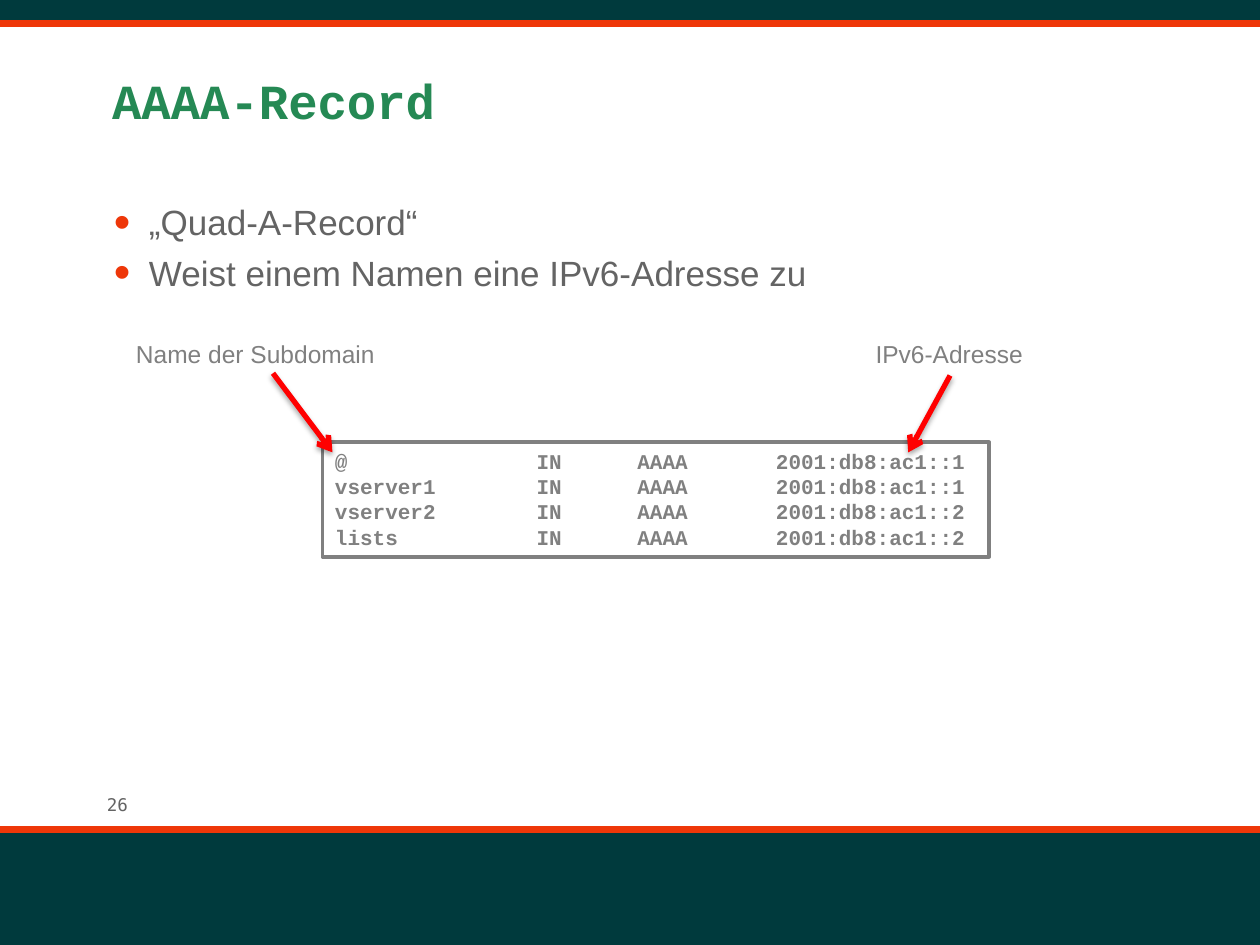
from dataclasses import dataclass

import pptx
import pptx.dml.color
import pptx.enum.shapes
import pptx.enum.text
import pptx.oxml
import pptx.oxml.ns
import pptx.util

Pt = pptx.util.Pt
NS = pptx.oxml.ns.nsdecls("a")


@dataclass(frozen=True)
class Theme:
    band: str = "003A3D"
    accent: str = "EE3709"
    title: str = "258954"
    body: str = "646464"
    muted: str = "808080"
    arrow: str = "FF0000"
    paper: str = "FFFFFF"
    sans: str = "Arial"
    mono: str = "Courier New"
    number_font: str = "DejaVu Sans Mono"
    title_size: float = 28
    body_size: float = 20
    label_size: float = 14
    code_size: float = 12
    number_size: float = 10


def rgb(value):
    return pptx.dml.color.RGBColor.from_string(value)


def xml(text):
    return pptx.oxml.parse_xml(text)


class SlideBuilder:
    def __init__(self, slide, theme):
        self.slide = slide
        self.theme = theme

    def fill_text(self, frame, lines, font, size, color, bold=False):
        frame.text = "\n".join(lines)
        for paragraph in frame.paragraphs:
            paragraph.alignment = pptx.enum.text.PP_ALIGN.LEFT
            for run in paragraph.runs:
                run.font.name = font
                run.font.size = Pt(size)
                run.font.bold = bold
                run.font.color.rgb = rgb(color)

    def place(self, placeholder, left, top, width, height, margin_top):
        placeholder.left, placeholder.top = Pt(left), Pt(top)
        placeholder.width, placeholder.height = Pt(width), Pt(height)
        frame = placeholder.text_frame
        frame.auto_size = pptx.enum.text.MSO_AUTO_SIZE.NONE
        frame.vertical_anchor = pptx.enum.text.MSO_ANCHOR.TOP
        frame.margin_top = Pt(margin_top)
        return frame

    def title(self, text, *box):
        frame = self.place(self.slide.shapes.title, *box, margin_top=9)
        t = self.theme
        self.fill_text(frame, [text], t.mono, t.title_size, t.title, bold=True)

    def bullets(self, items, *box):
        frame = self.place(self.slide.placeholders[1], *box, margin_top=6)
        t = self.theme
        self.fill_text(frame, items, t.sans, t.body_size, t.body)
        for index, paragraph in enumerate(frame.paragraphs):
            properties = paragraph._p.get_or_add_pPr()
            properties.set("marL", str(Pt(21)))
            properties.set("indent", str(-Pt(20)))
            for element in (
                f'<a:buClr {NS}><a:srgbClr val="{t.accent}"/></a:buClr>',
                f'<a:buSzPct {NS} val="135000"/>',
                f'<a:buFont {NS} typeface="{t.sans}"/>',
                f'<a:buChar {NS} char="•"/>',
            ):
                properties.append(xml(element))
            paragraph.space_before = Pt(5 if index else 0)

    def rectangle(self, left, top, width, height, fill, line, weight):
        shape = self.slide.shapes.add_shape(
            pptx.enum.shapes.MSO_SHAPE.RECTANGLE,
            Pt(left), Pt(top), Pt(width), Pt(height))
        shape.shadow.inherit = False
        shape.fill.solid()
        shape.fill.fore_color.rgb = rgb(fill)
        shape.line.color.rgb = rgb(line)
        shape.line.width = Pt(weight)
        return shape

    def band(self, top, height):
        self.rectangle(0, top, 720, height, self.theme.band, self.theme.band, 0.75)

    def text(self, text, left, top, width, height, font, size, color):
        label = self.slide.shapes.add_textbox(Pt(left), Pt(top), Pt(width), Pt(height))
        label.text_frame.word_wrap = False
        self.fill_text(label.text_frame, [text], font, size, color)

    def label(self, text, left, top, width):
        t = self.theme
        self.text(text, left, top, width, 24.5, t.sans, t.label_size, t.muted)

    def page_number(self, text, *box):
        t = self.theme
        self.text(text, *box, t.number_font, t.number_size, t.body)

    def zone_file(self, records, columns, *box):
        t = self.theme
        frame = self.rectangle(*box, t.paper, t.muted, 2).text_frame
        frame.word_wrap = True
        frame.vertical_anchor = pptx.enum.text.MSO_ANCHOR.TOP
        self.fill_text(frame, ["\t".join(record) for record in records],
                       t.mono, t.code_size, t.muted, bold=True)
        character = 0.6 * t.code_size
        stops = "".join(f'<a:tab pos="{Pt(column * character)}" algn="l"/>'
                        for column in columns)
        for paragraph in frame.paragraphs:
            paragraph._p.get_or_add_pPr().append(
                xml(f"<a:tabLst {NS}>{stops}</a:tabLst>"))
            paragraph.line_spacing = Pt(14.4)

    def line(self, start, end, color, weight, effects=""):
        connector = self.slide.shapes.add_connector(
            pptx.enum.shapes.MSO_CONNECTOR.STRAIGHT,
            *(Pt(value) for value in (*start, *end)))
        connector.line.color.rgb = rgb(color)
        connector.line.width = Pt(weight)
        connector._element.spPr.append(
            xml(f"<a:effectLst {NS}>{effects}</a:effectLst>"))
        return connector

    def rule(self, y):
        self.line((0, y), (720, y), self.theme.accent, 4)

    def arrow(self, start, end):
        shadow = (f'<a:outerShdw blurRad="{Pt(3.1)}" dist="{Pt(1.8)}" dir="5400000">'
                  '<a:srgbClr val="000000"><a:alpha val="35000"/></a:srgbClr>'
                  '</a:outerShdw>')
        connector = self.line(start, end, self.theme.arrow, 3, shadow)
        outline = connector._element.spPr.get_or_add_ln()
        outline.append(xml(f'<a:tailEnd {NS} type="arrow"/>'))


def main():
    deck = pptx.Presentation()
    deck.slide_width, deck.slide_height = Pt(720), Pt(540)
    page = SlideBuilder(deck.slides.add_slide(deck.slide_layouts[1]), Theme())

    page.page_number("26", 54, 450, 210, 19.5)
    page.band(473.8, 66.2)
    page.rule(473.8)
    page.band(0, 12.2)
    page.rule(13.7)

    page.title("AAAA-Record", 56.9, 31, 612, 71.3)
    page.bullets(["„Quad-A-Record“", "Weist einem Namen eine IPv6-Adresse zu"],
                 56.9, 108.7, 612, 341.3)

    hosts = [("@", 1), ("vserver1", 1), ("vserver2", 2), ("lists", 2)]
    records = [(name, "IN", "AAAA", f"2001:db8:ac1::{host}") for name, host in hosts]
    page.zone_file(records, (16, 24, 35), 184.3, 252.7, 380.9, 65.5)

    page.arrow((156, 213.3), (190, 258.5))
    page.label("Name der Subdomain", 70.6, 190, 152)
    page.label("IPv6-Adresse", 493.2, 190, 99.4)
    page.arrow((542.9, 214.6), (519, 258.5))

    deck.save("out.pptx")


if __name__ == "__main__":
    main()
